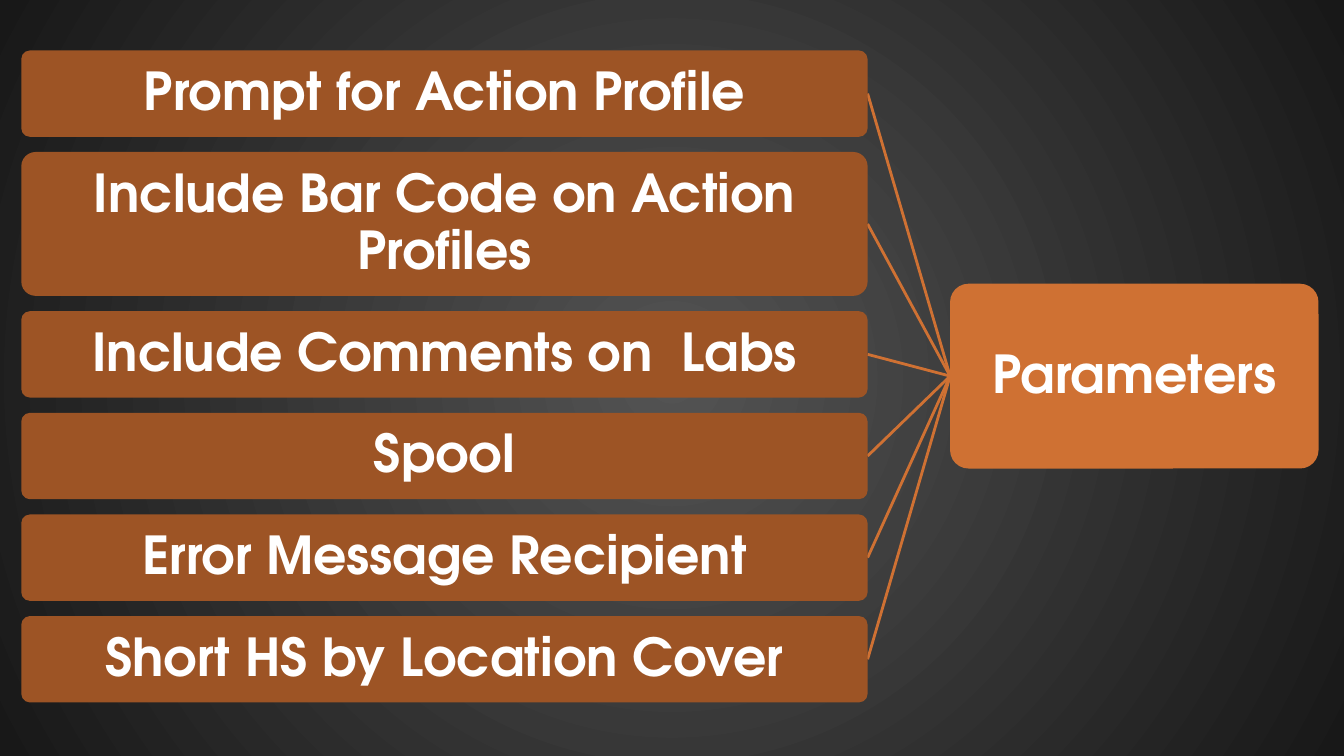
from lxml import etree
from pptx import Presentation
from pptx.dml.color import RGBColor
from pptx.enum.shapes import MSO_CONNECTOR, MSO_SHAPE
from pptx.enum.text import MSO_ANCHOR, PP_ALIGN
from pptx.oxml.ns import qn
from pptx.util import Pt

ROUNDED = MSO_SHAPE.ROUNDED_RECTANGLE
STRAIGHT = MSO_CONNECTOR.STRAIGHT
MIDDLE = MSO_ANCHOR.MIDDLE
CENTER = PP_ALIGN.CENTER

ORANGE = RGBColor(0xCF, 0x71, 0x33)
BROWN = RGBColor(0x9D, 0x54, 0x25)
WHITE = RGBColor(0xFF, 0xFF, 0xFF)
GLOW = RGBColor(0x53, 0x53, 0x53)
EDGE = RGBColor(0x18, 0x18, 0x18)

# Options, each with the number of lines it takes
OPTIONS = [
    ("Prompt for Action Profile", 1),
    ("Include Bar Code on Action Profiles", 2),
    ("Include Comments on  Labs", 1),
    ("Spool", 1),
    ("Error Message Recipient", 1),
    ("Short HS by Location Cover", 1),
]
HEIGHTS = {1: 46.3, 2: 77.1}
OPTION_LEFT, OPTION_TOP, OPTION_WIDTH, OPTION_GAP = 11.4, 27, 453.4, 8.15
ROOT_LEFT, ROOT_TOP, ROOT_WIDTH, ROOT_HEIGHT = 509, 152, 197.4, 99


class DiagramSlide:
    """Holds the diagram style and draws on one slide; lengths are in points."""

    font = "TeX Gyre Adventor"
    size = 28
    inset = 3

    def __init__(self, slide):
        self.slide = slide

    def radial_background(self, inner, outer):
        fill = self.slide.background.fill
        fill.gradient()
        for stop, color in zip(fill.gradient_stops, (inner, outer)):
            stop.color.rgb = color
        for stop, position in zip(fill.gradient_stops, (0, 1)):
            stop.position = position
        gradient = self.slide.background._cSld.find(".//" + qn("a:gradFill"))
        linear = gradient.find(qn("a:lin"))
        circle = etree.Element(qn("a:path"), {"path": "circle"})
        center = dict.fromkeys("ltrb", "50000")
        etree.SubElement(circle, qn("a:fillToRect"), center)
        gradient.replace(linear, circle)

    def box(self, text, left, top, width, height, color):
        box = self.slide.shapes.add_shape(
            ROUNDED, Pt(left), Pt(top), Pt(width), Pt(height))
        box.adjustments[0] = 0.1
        box.shadow.inherit = False
        box.fill.solid()
        box.fill.fore_color.rgb = color
        box.line.fill.background()

        frame = box.text_frame
        frame.word_wrap = True
        frame.vertical_anchor = MIDDLE
        frame.margin_left = frame.margin_right = Pt(self.inset)
        frame.margin_top = frame.margin_bottom = Pt(self.inset)
        paragraph = frame.paragraphs[0]
        paragraph.alignment = CENTER
        paragraph.line_spacing = 0.9
        run = paragraph.add_run()
        run.text = text
        run.font.name = self.font
        run.font.size = Pt(self.size)
        run.font.bold = True
        run.font.color.rgb = WHITE

    def branch(self, x1, y1, x2, y2):
        branch = self.slide.shapes.add_connector(
            STRAIGHT, Pt(x1), Pt(y1), Pt(x2), Pt(y2))
        branch.line.color.rgb = ORANGE
        branch.line.width = Pt(1.5)
        etree.SubElement(branch._element.spPr, qn("a:effectLst"))


def main():
    deck = Presentation()
    deck.slide_width, deck.slide_height = Pt(720), Pt(405)
    blank_layout = deck.slide_layouts[6]
    diagram = DiagramSlide(deck.slides.add_slide(blank_layout))
    diagram.radial_background(GLOW, EDGE)

    diagram.box("Parameters", ROOT_LEFT, ROOT_TOP, ROOT_WIDTH, ROOT_HEIGHT, ORANGE)
    root_middle = ROOT_TOP + ROOT_HEIGHT / 2
    top = OPTION_TOP
    for option, lines in OPTIONS:
        height = HEIGHTS[lines]
        diagram.branch(ROOT_LEFT, root_middle,
                       OPTION_LEFT + OPTION_WIDTH, top + height / 2)
        diagram.box(option, OPTION_LEFT, top, OPTION_WIDTH, height, BROWN)
        top += height + OPTION_GAP

    deck.save("out.pptx")


if __name__ == "__main__":
    main()
